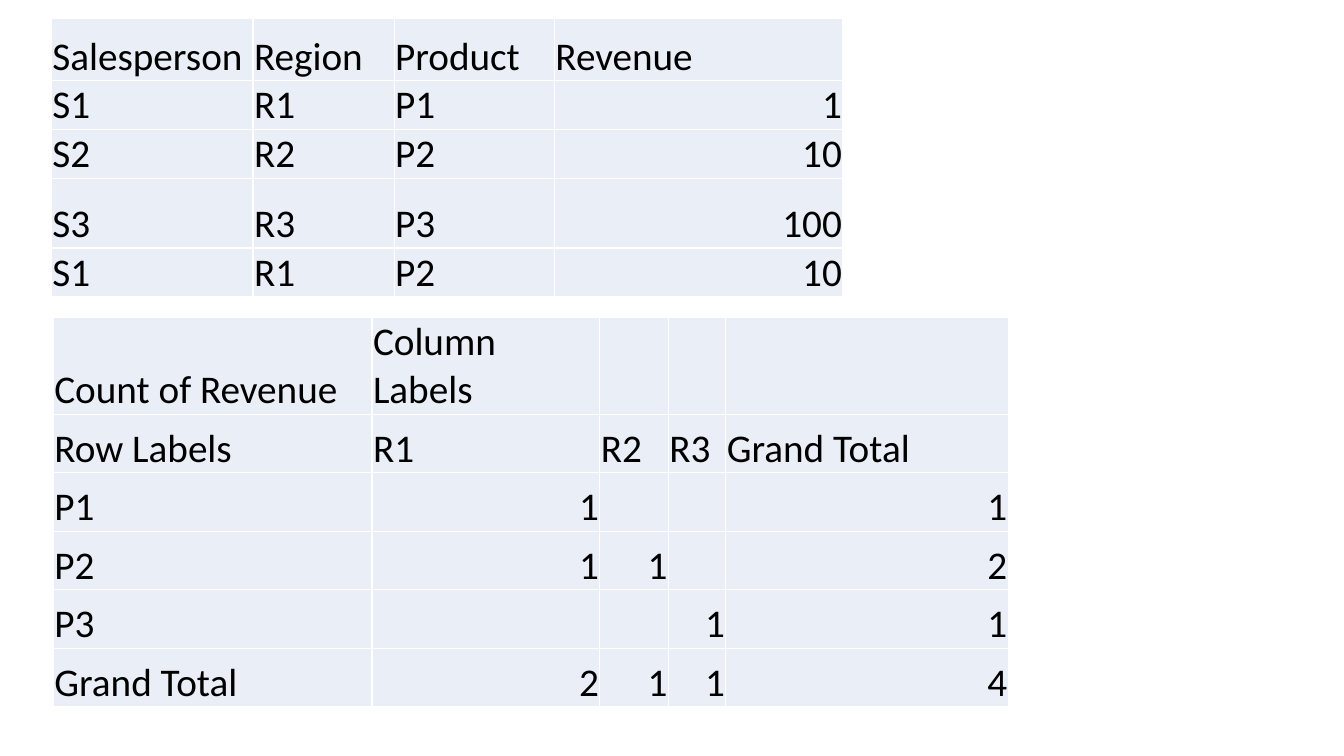
from lxml.etree import SubElement
from pptx import Presentation
from pptx.dml.color import RGBColor
from pptx.enum.text import MSO_ANCHOR, PP_ALIGN
from pptx.oxml.ns import qn
from pptx.util import Inches, Pt

BLACK, WHITE, PALE_BLUE = "000000", "FFFFFF", "EAEFF7"

SALES = {
    "box": (0.51, 0.18, 7.86, 2.73),
    "columns": [2, 1.4, 1.59, 2.86],
    "rows": [0.62, 0.35, 0.35, 0.69, 0.35],
    "cells": [
        ["Salesperson", "Region", "Product", "Revenue"],
        ["S1", "R1", "P1", "1"],
        ["S2", "R2", "P2", "10"],
        ["S3", "R3", "P3", "100"],
        ["S1", "R1", "P2", "10"],
    ],
}
PIVOT = {
    "box": (0.53, 3.15, 9.47, 3.86),
    "columns": [3.16, 2.26, 0.68, 0.57, 2.8],
    "rows": [0.58] * 6,
    "cells": [
        ["Count of Revenue", "Column Labels", "", "", ""],
        ["Row Labels", "R1", "R2", "R3", "Grand Total"],
        ["P1", "1", "", "", "1"],
        ["P2", "1", "1", "", "2"],
        ["P3", "", "", "1", "1"],
        ["Grand Total", "2", "1", "1", "4"],
    ],
}


def write_text(cell, text, size=28, font="Calibri", color=BLACK, align=PP_ALIGN.LEFT):
    cell.vertical_anchor = MSO_ANCHOR.BOTTOM
    cell.margin_left = cell.margin_right = cell.margin_top = Inches(0.01)
    cell.margin_bottom = 0
    paragraph = cell.text_frame.paragraphs[0]
    paragraph.alignment = align
    run = paragraph.add_run()
    run.text = text
    run.font.size = Pt(size)
    run.font.name = font
    run.font.color.rgb = RGBColor.from_string(color)


def paint_cell(cell, fill, border):
    """Give the cell a solid fill and a 1 pt border on all four sides."""
    properties = cell._tc.get_or_add_tcPr()
    for side in ("lnL", "lnR", "lnT", "lnB"):
        line = SubElement(properties, qn(f"a:{side}"), w=str(Pt(1)))
        solid = SubElement(line, qn("a:solidFill"))
        SubElement(solid, qn("a:srgbClr"), val=border)
    cell.fill.solid()
    cell.fill.fore_color.rgb = RGBColor.from_string(fill)


presentation = Presentation()
presentation.slide_width = Inches(13.33)
presentation.slide_height = Inches(7.5)
slide = presentation.slides.add_slide(presentation.slide_layouts[6])

for content in (SALES, PIVOT):
    box = [Inches(length) for length in content["box"]]
    table = slide.shapes.add_table(
        len(content["rows"]), len(content["columns"]), *box
    ).table
    table.first_row = False
    table.horz_banding = False
    for column, width in zip(table.columns, content["columns"]):
        column.width = Inches(width)
    for row, height, texts in zip(table.rows, content["rows"], content["cells"]):
        row.height = Inches(height)
        for cell, text in zip(row.cells, texts):
            paint_cell(cell, PALE_BLUE, WHITE)
            if text:
                align = PP_ALIGN.RIGHT if text.isdigit() else PP_ALIGN.LEFT
                write_text(cell, text, align=align)

presentation.save("out.pptx")
